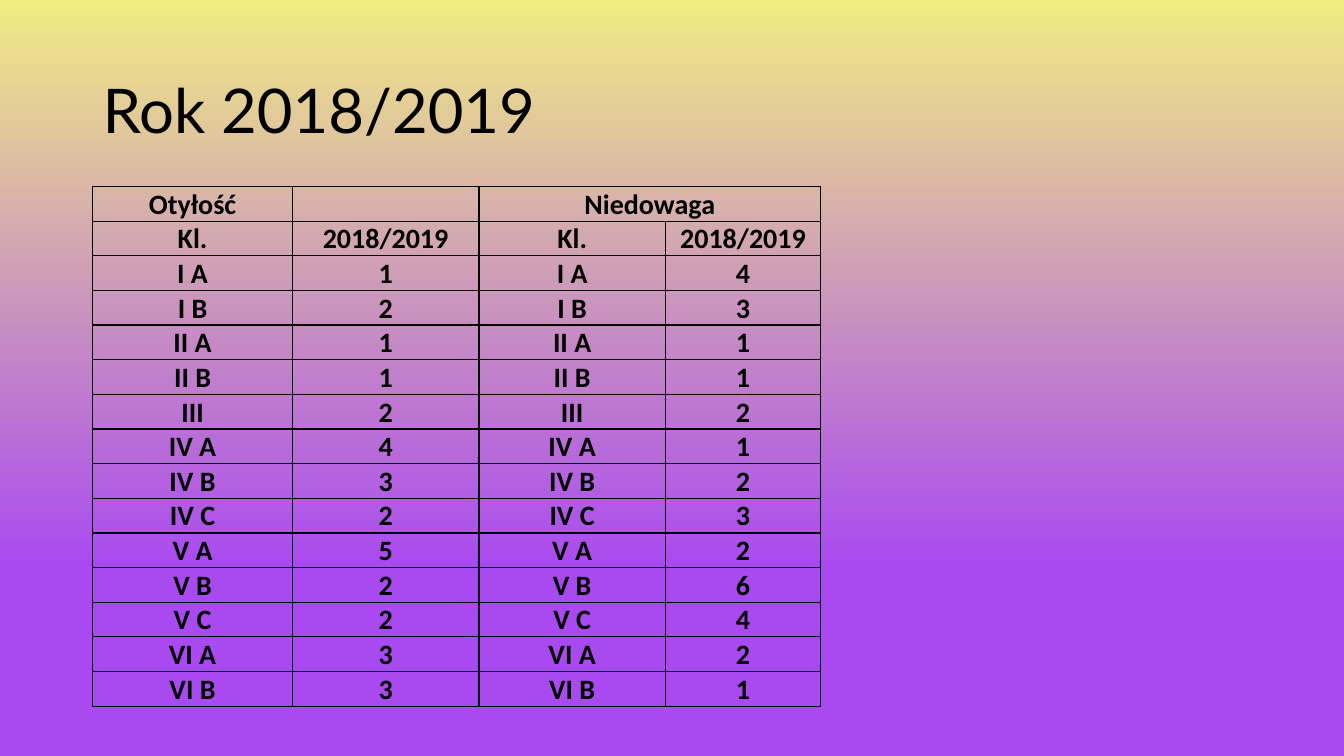
from lxml import etree
from pptx import Presentation
from pptx.dml.color import RGBColor
from pptx.enum.text import MSO_ANCHOR as Anchor, PP_ALIGN as Align
from pptx.oxml.ns import qn
from pptx.util import Inches, Pt

CLASSES = ["I A", "I B", "II A", "II B", "III", "IV A", "IV B", "IV C",
           "V A", "V B", "V C", "VI A", "VI B"]
OBESITY = [1, 2, 1, 1, 2, 4, 3, 2, 5, 2, 2, 3, 3]
UNDERWEIGHT = [4, 3, 1, 1, 2, 1, 2, 3, 2, 6, 4, 2, 1]


def rgb(color):
    return RGBColor.from_string(color)


class SlideBuilder:
    ink = "000000"
    title_font = "Lato"
    table_font = "Calibri"

    def __init__(self, s):
        self.s = s

    def background(self, stops):
        fill = self.s.background.fill
        fill.gradient()
        fill.gradient_angle = 270
        for stop, (position, color) in zip(fill.gradient_stops, stops):
            stop.position = position
            stop.color.rgb = rgb(color)

    def run(self, p, text, font, size, bold=False):
        r = p.add_run()
        r.text = text
        r.font.name = font
        r.font.size = Pt(size)
        r.font.bold = bold
        r.font.color.rgb = rgb(self.ink)

    def title(self, text, x, y, w, h):
        sp = self.s.shapes.add_textbox(Inches(x), Inches(y), Inches(w), Inches(h))
        tf = sp.text_frame
        tf.word_wrap = True
        tf.vertical_anchor = Anchor.MIDDLE
        p = tf.paragraphs[0]
        p.line_spacing = 0.9
        self.run(p, text, self.title_font, 44)

    def borders(self, cell):
        tc_pr = cell._tc.get_or_add_tcPr()
        for side in ("lnL", "lnR", "lnT", "lnB"):
            ln = etree.SubElement(tc_pr, qn(f"a:{side}"), w=str(Pt(1)))
            fill = etree.SubElement(ln, qn("a:solidFill"))
            etree.SubElement(fill, qn("a:srgbClr"), val=self.ink)

    def cell(self, cell, text):
        self.borders(cell)
        cell.fill.background()
        cell.vertical_anchor = Anchor.MIDDLE
        cell.margin_left = cell.margin_right = cell.margin_top = Inches(0.01)
        cell.margin_bottom = 0
        p = cell.text_frame.paragraphs[0]
        p.alignment = Align.CENTER
        if text:
            self.run(p, text, self.table_font, 20, bold=True)

    def table(self, rows, x, y, widths, height):
        frame = self.s.shapes.add_table(len(rows), len(widths), Inches(x), Inches(y),
                                        Inches(sum(widths)), Inches(height))
        table = frame.table
        table.first_row = table.horz_banding = False
        for column, width in zip(table.columns, widths):
            column.width = Inches(width)
        for i, row in enumerate(rows):
            for j, text in enumerate(row):
                self.cell(table.cell(i, j), text)
        return table


def main():
    prs = Presentation()
    prs.slide_width, prs.slide_height = Inches(13.33), Inches(7.5)
    slide = SlideBuilder(prs.slides.add_slide(prs.slide_layouts[6]))

    # Background and title
    slide.background([(0, "F1EB83"), (0.75, "A94AF0")])
    slide.title("Rok 2018/2019", 0.92, 0.4, 11.5, 1.45)

    # Table of both groups by class
    rows = [["Otyłość", "", "Niedowaga", ""], ["Kl.", "2018/2019"] * 2]
    rows += [[name, str(obese), name, str(under)]
             for name, obese, under in zip(CLASSES, OBESITY, UNDERWEIGHT)]
    table = slide.table(rows, 0.92, 1.85, [1.98, 1.85, 1.85, 1.54], 5.16)
    table.cell(0, 2).merge(table.cell(0, 3))

    prs.save("out.pptx")


if __name__ == "__main__":
    main()
